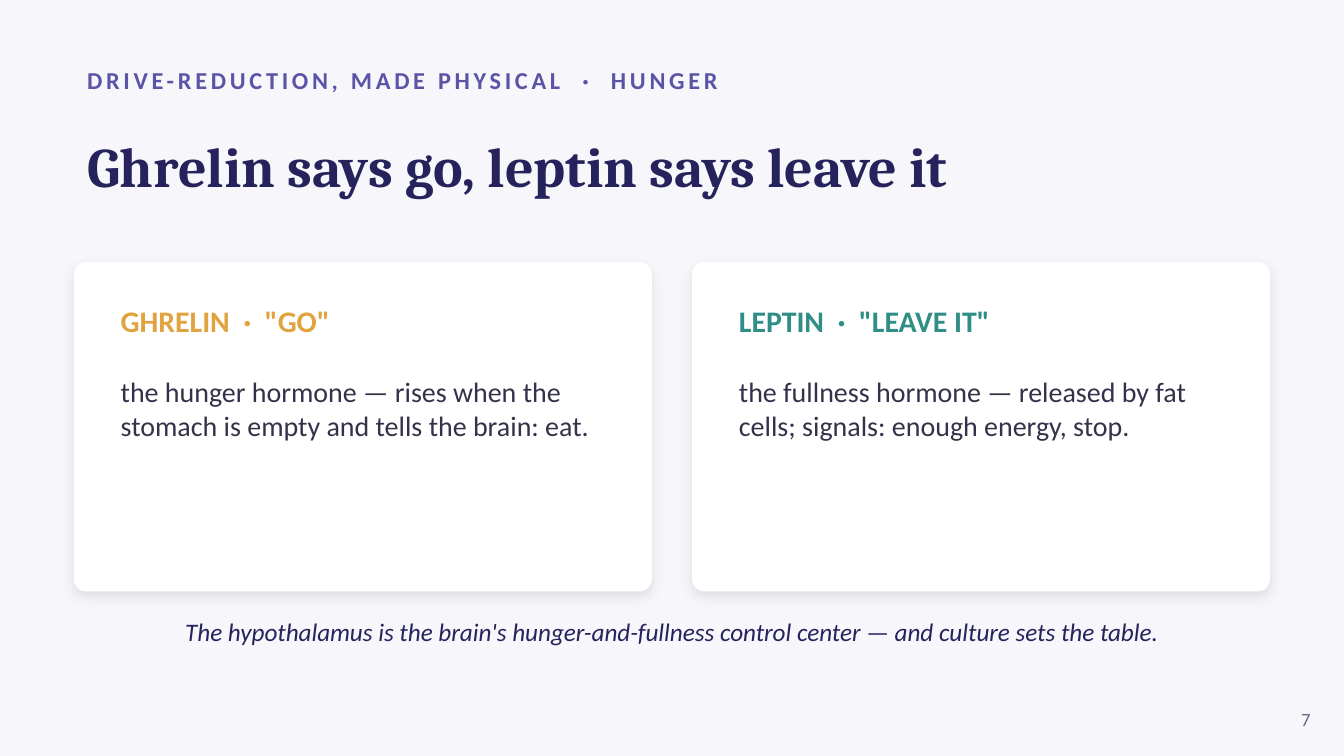
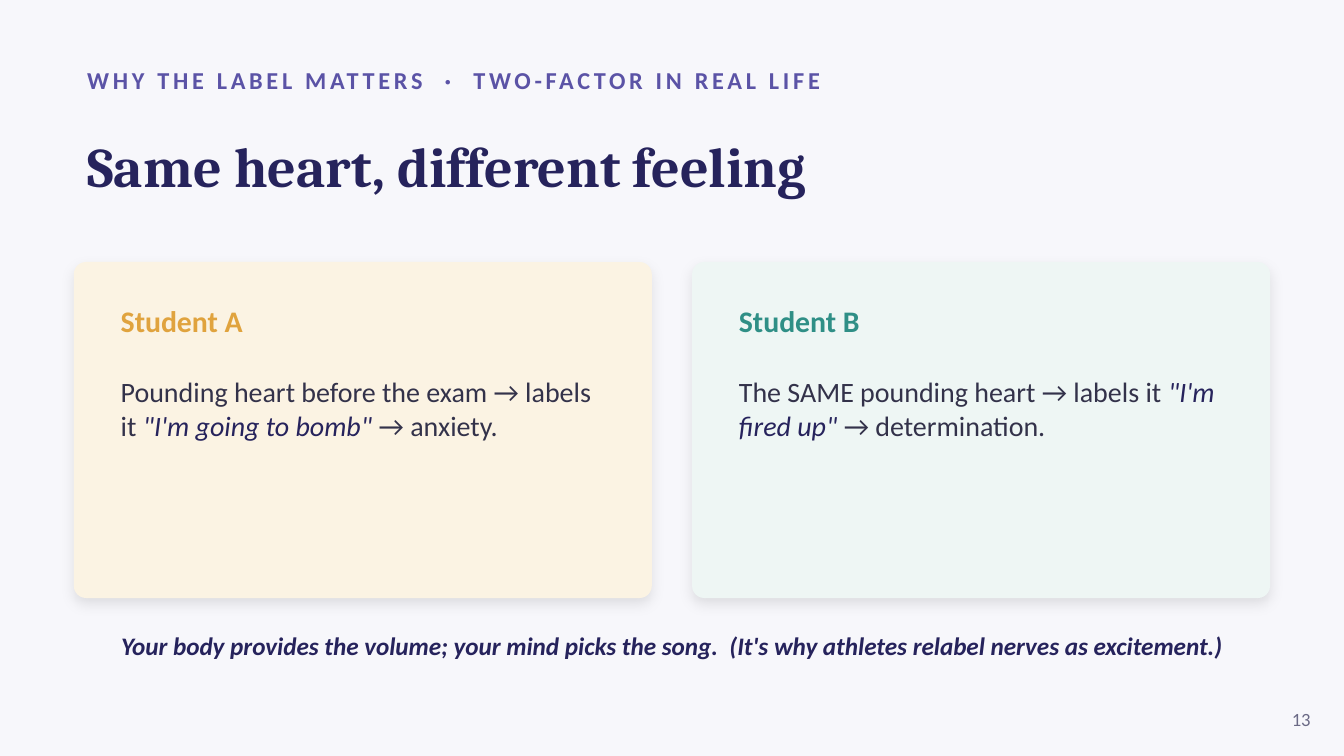
"""Build two psychology slides, each with a pair of contrasting cards."""
import lxml.etree
import pptx
import pptx.dml.color
import pptx.enum.shapes
import pptx.enum.text
import pptx.oxml.ns
import pptx.util

RGB = pptx.dml.color.RGBColor
ALIGN = pptx.enum.text.PP_ALIGN
ANCHOR = pptx.enum.text.MSO_ANCHOR

PAPER = RGB(0xF7, 0xF7, 0xFB)
WHITE = RGB(0xFF, 0xFF, 0xFF)
CREAM = RGB(0xFB, 0xF3, 0xE3)
MINT = RGB(0xEE, 0xF6, 0xF4)
VIOLET = RGB(0x5B, 0x53, 0xA6)
NAVY = RGB(0x26, 0x23, 0x5C)
AMBER = RGB(0xE0, 0xA3, 0x3E)
TEAL = RGB(0x2F, 0x8F, 0x86)
INK = RGB(0x33, 0x32, 0x4A)
GREY = RGB(0x6B, 0x6A, 0x86)
SANS, SERIF = "Calibri", "Cambria"

EMU_PER_PX = 4572
SLIDE_W, SLIDE_H = 2000, 1125
MARGIN = 110
CONTENT_W = SLIDE_W - 2 * MARGIN
CARD_TOP, CARD_W, CARD_RADIUS = 390, 860, 18
CARD_STEP = CONTENT_W - CARD_W
CARD_PAD = 50

SLIDES = [
    {
        "kicker": "DRIVE-REDUCTION, MADE PHYSICAL  ·  HUNGER",
        "title": "Ghrelin says go, leptin says leave it",
        "card_height": 490,
        "cards": [
            ("GHRELIN  ·  \"GO\"", AMBER, WHITE,
             [("the hunger hormone — rises when the stomach is empty and tells the brain: eat.", False)]),
            ("LEPTIN  ·  \"LEAVE IT\"", TEAL, WHITE,
             [("the fullness hormone — released by fat cells; signals: enough energy, stop.", False)]),
        ],
        "takeaway": "The hypothalamus is the brain's hunger-and-fullness control center — and culture sets the table.",
        "takeaway_top": 900,
        "takeaway_bold": False,
        "number": "7",
    },
    {
        "kicker": "WHY THE LABEL MATTERS  ·  TWO-FACTOR IN REAL LIFE",
        "title": "Same heart, different feeling",
        "card_height": 500,
        "cards": [
            ("Student A", AMBER, CREAM,
             [("Pounding heart before the exam → labels it ", False),
              ("\"I'm going to bomb\"", True), (" → anxiety.", False)]),
            ("Student B", TEAL, MINT,
             [("The SAME pounding heart → labels it ", False),
              ("\"I'm fired up\"", True), (" → determination.", False)]),
        ],
        "takeaway": "Your body provides the volume; your mind picks the song.  "
                    "(It's why athletes relabel nerves as excitement.)",
        "takeaway_top": 920,
        "takeaway_bold": True,
        "number": "13",
    },
]


def px(*lengths):
    return [pptx.util.Emu(length * EMU_PER_PX) for length in lengths]


def add_run(paragraph, text, size, color, face=SANS, bold=False, italic=False):
    run = paragraph.add_run()
    run.text = text
    run.font.name = face
    run.font.size = pptx.util.Pt(size)
    run.font.color.rgb = color
    run.font.bold = bold
    run.font.italic = italic
    return run


def add_frame(slide, box, anchor=ANCHOR.MIDDLE):
    frame = slide.shapes.add_textbox(*px(*box)).text_frame
    frame.word_wrap = True
    frame.vertical_anchor = anchor
    return frame


def add_line(slide, box, text, size, color, align=ALIGN.LEFT, **style):
    paragraph = add_frame(slide, box).paragraphs[0]
    paragraph.alignment = align
    return add_run(paragraph, text, size, color, **style)


def add_soft_shadow(panel):
    effects = panel._element.spPr.find(pptx.oxml.ns.qn("a:effectLst"))
    shadow = lxml.etree.SubElement(
        effects, pptx.oxml.ns.qn("a:outerShdw"),
        blurRad=str(pptx.util.Pt(7)), dist=str(pptx.util.Pt(3)),
        dir=str(90 * 60000), algn="bl", rotWithShape="0")
    tint = lxml.etree.SubElement(shadow, pptx.oxml.ns.qn("a:srgbClr"), val="000000")
    lxml.etree.SubElement(tint, pptx.oxml.ns.qn("a:alpha"), val="10000")


def add_panel(slide, left, height, fill):
    panel = slide.shapes.add_shape(
        pptx.enum.shapes.MSO_SHAPE.ROUNDED_RECTANGLE, *px(left, CARD_TOP, CARD_W, height))
    panel.adjustments[0] = CARD_RADIUS / height
    panel.fill.solid()
    panel.fill.fore_color.rgb = fill
    panel.line.fill.background()
    panel.shadow.inherit = False
    add_soft_shadow(panel)


def add_card_text(slide, left, height, heading, accent, body):
    box = (left + CARD_PAD, CARD_TOP + CARD_PAD, CARD_W - 2 * CARD_PAD, height - 80)
    frame = add_frame(slide, box, ANCHOR.TOP)
    add_run(frame.paragraphs[0], heading, 16, accent, bold=True)
    description = frame.add_paragraph()
    description.space_before = pptx.util.Pt(19.5)
    for text, quoted in body:
        add_run(description, text, 15, NAVY if quoted else INK, italic=quoted)


def build_slide(deck, content):
    slide = deck.slides.add_slide(deck.slide_layouts[6])
    slide.background.fill.solid()
    slide.background.fill.fore_color.rgb = PAPER

    kicker = add_line(slide, (MARGIN, 84, 1800, 70), content["kicker"], 13, VIOLET, bold=True)
    kicker.font._element.set("spc", "200")
    add_line(slide, (MARGIN, 156, CONTENT_W, 180), content["title"], 30, NAVY,
             face=SERIF, bold=True)

    height = content["card_height"]
    lefts = [MARGIN + i * CARD_STEP for i in range(len(content["cards"]))]
    for left, (_, _, fill, _) in zip(lefts, content["cards"]):
        add_panel(slide, left, height, fill)
    for left, (heading, accent, _, body) in zip(lefts, content["cards"]):
        add_card_text(slide, left, height, heading, accent, body)

    add_line(slide, (MARGIN, content["takeaway_top"], CONTENT_W, 80), content["takeaway"],
             13.5, NAVY, ALIGN.CENTER, bold=content["takeaway_bold"], italic=True)
    add_line(slide, (1870, 1040, 100, 60), content["number"], 10, GREY, ALIGN.RIGHT)


def main():
    deck = pptx.Presentation()
    deck.slide_width, deck.slide_height = px(SLIDE_W, SLIDE_H)
    for content in SLIDES:
        build_slide(deck, content)
    deck.save("out.pptx")


if __name__ == "__main__":
    main()
